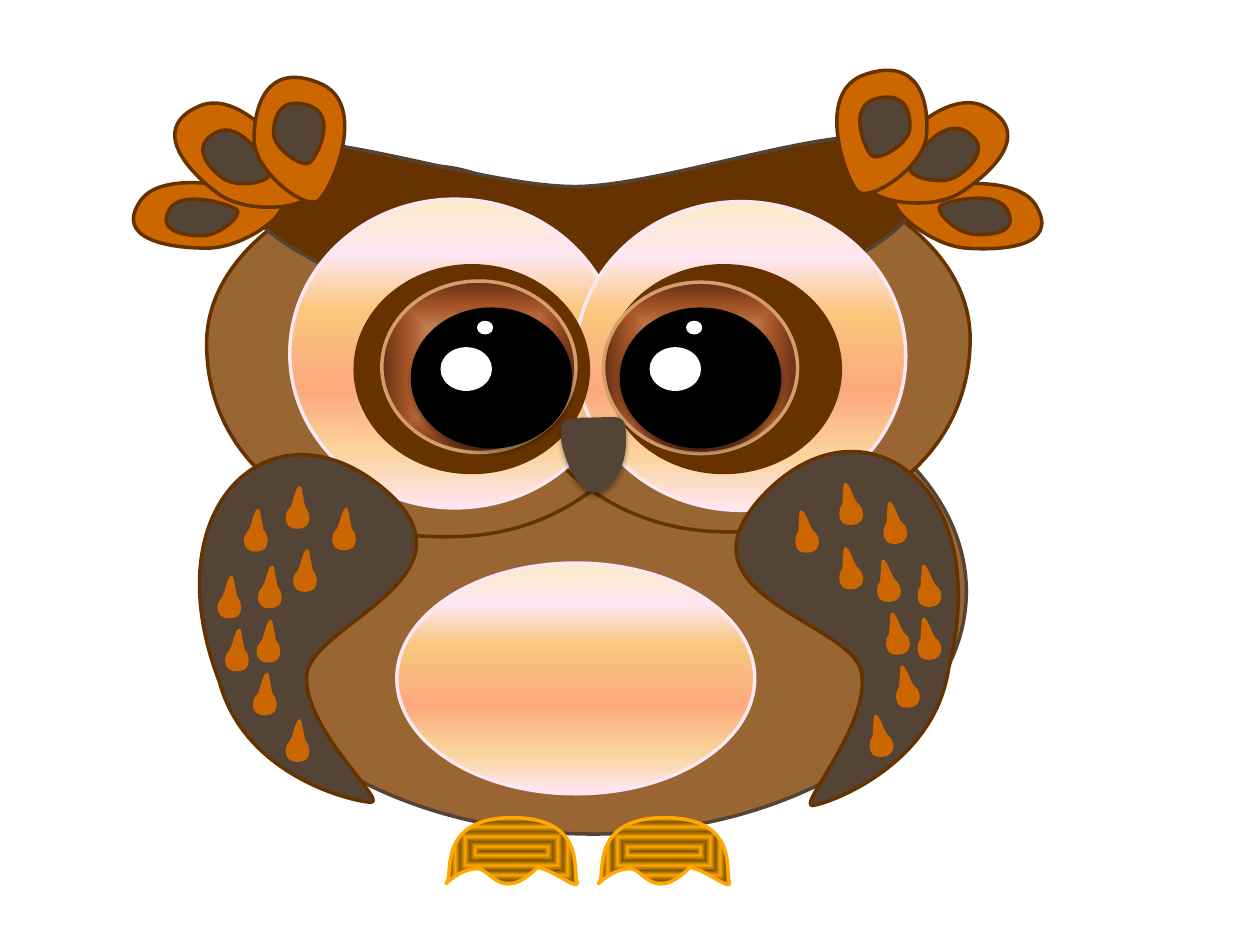
import math
from dataclasses import dataclass

import pptx
import pptx.dml.color
import pptx.enum.shapes
import pptx.oxml
import pptx.oxml.ns
import pptx.util
from lxml import etree

Pt = pptx.util.Pt


@dataclass(frozen=True)
class Theme:
    fur: str = "996633"
    bark: str = "663300"
    slate: str = "544436"
    rust: str = "CC6600"
    black: str = "000000"
    white: str = "FFFFFF"
    blush: str = "FEE7F2"
    tan: str = "D49E6C"
    gold: str = "FFA800"
    line: float = 2
    # Gradients: (position in percent, colour)
    sunset: tuple = ((0, "FBEAC7"), (18, "FEE7F2"), (36, "FAC77D"),
                     (61, "FBA97D"), (82, "FBD49C"), (100, "FEE7F2"))
    amber: tuple = ((0, "D6B19C"), (30, "D49E6C"), (70, "A65528"), (100, "663012"))
    brass: tuple = tuple(zip((0, 13, 28, 43, 58, 72, 87, 100),
                             ("825600", "FFA800") * 4))


# Outlines: a start point, then cubic curves (6 numbers) or lines (2 numbers).
# Each one is stretched to its frame, so only the proportions count.
HEAD = [(372, 138), (370, 89, 242, 0, 180, 0), (118, 1, 0, 53, 0, 141),
        (0, 230, 76, 297, 196, 294), (317, 292, 375, 187, 372, 138)]
BROW = [(0, 30), (2, -34, 179, 40, 271, 40), (362, 39, 546, -41, 549, 28),
        (554, 100, 363, 152, 272, 152), (180, 153, -2, 95, 0, 30)]
BEAK = [(0, 18), (0, 8, -5, 0, 22, 0), (48, 0, 52, -5, 52, 18),
        (52, 41, 40, 60, 26, 60), (12, 60, 1, 28, 0, 18)]
WING = [(81, 124.8), (72.7, 96.2, -35.5, 96.6, 12.1, 31.2),
        (59.7, -34.3, 141.9, 8.1, 129.9, 115.1),
        (129.7, 171.9, 71.4, 201.7, 63.6, 203.5),
        (55.1, 204.8, 90.1, 153.4, 81, 124.8)]
DROP = [(-12, 4.1), (-11.6, 1.3, -8, -3.9, -1.6, -3.8), (11.7, -12.7),
        (11.9, -9.1, 4.2, 0.6, 4.5, 4.2), (4.3, 10.5, -1, 13.4, -3.8, 13),
        (-7.5, 13.3, -12.3, 6.9, -12, 4.1)]
FEATHER = [(5, 15), (24, -15, 107, 8, 116, 15), (126, 22, 89, 52, 58, 52),
           (28, 52, -15, 45, 5, 15)]
FOOT = [(1, 50), (5, 43, -6, 0, 52, 0), (110, 0, 100, 41, 103, 50),
        (106, 59, 85, 41, 72, 39), (44, 67, 36, 41, 25, 40), (8, 40, -4, 57, 1, 50)]


def span(path, axis, steps=20):
    """Lowest and highest value that an outline reaches along one axis."""
    seen = [path[0][axis]]
    for seg in path[1:]:
        ends = (seen[-1], *seg[axis::2])
        n = len(ends) - 1
        for i in range(1, steps + 1):
            t = i / steps
            seen.append(sum(math.comb(n, k) * (1 - t) ** (n - k) * t ** k * v
                            for k, v in enumerate(ends)))
    return min(seen), max(seen)


class Painter:
    """Holds the theme and the group on the current slide."""

    def __init__(self, slide, theme):
        self.theme = theme
        self.shapes = slide.shapes.add_group_shape().shapes

    def ellipse(self, at, fill, line=None, **style):
        sp = self.shapes.add_shape(pptx.enum.shapes.MSO_SHAPE.OVAL, *map(Pt, at))
        self.paint(sp, fill, line, **style)

    def outline(self, path, at, fill, line=None, rot=0, flip=False, **style):
        left, top, width, height = map(Pt, at)
        (x0, x1), (y0, y1) = span(path, 0), span(path, 1)

        def place(x, y):
            px = round((x - x0) / (x1 - x0) * width)
            return width - px if flip else px, round((y - y0) / (y1 - y0) * height)

        # Frame first, then the curved segments inside it
        fb = self.shapes.build_freeform(0, 0)
        fb.add_line_segments([(width, 0), (width, height), (0, height)])
        sp = fb.convert_to_shape(left, top)
        sp.rotation = rot
        track = next(sp._element.iter(pptx.oxml.ns.qn("a:path")))
        for child in list(track):
            track.remove(child)
        tags = {2: "lnTo", 6: "cubicBezTo"}
        for i, seg in enumerate(path):
            step = self.add(track, tags[len(seg)] if i else "moveTo")
            for x, y in zip(seg[::2], seg[1::2]):
                px, py = place(x, y)
                self.add(step, "pt", x=px, y=py)
        self.add(track, "close")
        self.paint(sp, fill, line, **style)

    def paint(self, sp, fill, line, radial=False, shadow=False):
        sp.shadow.inherit = False
        if isinstance(fill, str):
            sp.fill.solid()
            sp.fill.fore_color.rgb = pptx.dml.color.RGBColor.from_string(fill)
        else:
            self.gradient(sp, fill, radial)
        if line:
            sp.line.color.rgb = pptx.dml.color.RGBColor.from_string(line)
            sp.line.width = Pt(self.theme.line)
        else:
            sp.line.fill.background()
        if shadow:
            self.soft_shadow(sp)

    def gradient(self, sp, stops, radial):
        sp.fill.gradient()
        grad = sp._element.spPr.find(pptx.oxml.ns.qn("a:gradFill"))
        for child in list(grad):
            grad.remove(child)
        gs_lst = self.add(grad, "gsLst")
        for pos, colour in stops:
            self.add(self.add(gs_lst, "gs", pos=pos * 1000), "srgbClr", val=colour)
        if radial:
            self.add(self.add(grad, "path", path="shape"), "fillToRect",
                     l=50000, t=50000, r=50000, b=50000)
        else:
            self.add(grad, "lin", ang=5400000, scaled=0)

    def soft_shadow(self, sp):
        effects = sp._element.spPr.find(pptx.oxml.ns.qn("a:effectLst"))
        shade = self.add(effects, "outerShdw", blurRad=Pt(3.1), dist=Pt(1.8),
                         dir=5400000, rotWithShape=0)
        clr = self.add(shade, "srgbClr", val=self.theme.black)
        self.add(clr, "alpha", val=35000)

    def add(self, parent, tag, **attrs):
        return etree.SubElement(parent, pptx.oxml.ns.qn("a:" + tag),
                                {k: str(v) for k, v in attrs.items()})


def main():
    prs = pptx.Presentation()
    prs.slide_width, prs.slide_height = Pt(720), Pt(540)
    th = Theme()
    owl = Painter(prs.slides.add_slide(prs.slide_layouts[6]), th)

    # Body, the two halves of the head, and the brow
    owl.ellipse((126, 199.4, 426.2, 277.2), th.fur, th.slate)
    owl.outline(HEAD, (118.1, 95, 268.6, 211.7), th.fur, th.bark)
    owl.outline(HEAD, (285.8, 92.2, 268.6, 211.7), th.fur, th.bark, flip=True)
    owl.outline(BROW, (133.9, 77.8, 395.3, 109.4), th.bark, th.slate)

    # Eyes: discs, rings with irises, then pupils with two glints
    for x, y in ((165.6, 113.8), (329, 115.2)):
        owl.ellipse((x, y, 188.6, 176.4), th.sunset, th.blush)
    for ring_x, iris_x, iris_y in ((347, 344.9, 161.3), (203, 218.2, 160.6)):
        owl.ellipse((ring_x, 151.9, 133.2, 118.1), th.bark, th.bark)
        owl.ellipse((iris_x, iris_y, 110.9, 97.9), th.amber, th.tan, radial=True)
    for x in (354.2, 234.7):
        owl.ellipse((x, 175.7, 92.2, 80.6), th.black, shadow=True)
        owl.ellipse((x + 18, 199.4, 27.4, 23), th.white, th.white)
        owl.ellipse((x + 38.9, 184.3, 7.2, 5.8), th.white, th.white)

    # Beak
    owl.outline(BEAK, (320.4, 238.3, 37.4, 43.2), th.slate, shadow=True)

    # Wings with their drops
    right_drops = ((451.4, 295.9), (476.6, 280.1), (501.8, 290.9), (476.6, 316.8),
                   (498.2, 324), (521.3, 326.9), (503.3, 354.2), (521.3, 357.1),
                   (509, 384.5), (493.9, 412.6))
    left_drops = ((188.6, 294.5), (162, 282.2), (138.2, 295.2), (166.3, 318.2),
                  (146.2, 327.6), (123.1, 333.4), (145.4, 358.6), (127.4, 363.6),
                  (143.3, 388.8), (162, 415.4))
    for x, y, rot, drop_rot, flip, drops in (
            (414.7, 257.8, 7.9, 307.5, False, right_drops),
            (118.8, 258.5, 345.2, 45.6, True, left_drops)):
        owl.outline(WING, (x, y, 131, 203.8), th.slate, th.bark, rot, flip)
        for drop in drops:
            owl.outline(DROP, (*drop, 17.3, 18.7), th.rust, th.rust, drop_rot, flip)

    # Belly
    owl.ellipse((226.8, 321.8, 204.5, 131.8), th.sunset, th.blush)

    # Ear feathers: outer and inner size, then place and turn on each side
    sizes = (((85, 37.4), (41, 20.9)), ((85, 46.1), (41, 25.9)), ((71.3, 51.8), (34.6, 28.8)))
    left_ear = (((76.3, 104.4), (95, 113.8), 0), ((95.8, 69.1), (114.5, 78.5), 37.1),
                ((135.4, 54), (153.4, 61.9), 90))
    right_ear = (((510.5, 104.4), (536.4, 113), 4.2), ((493.9, 67.7), (519.1, 77), 327.1),
                 ((468, 49.7), (488.2, 58.3), 274.2))
    for ear, flip in ((left_ear, False), (right_ear, True)):
        for (outer, inner), (outer_at, inner_at, rot) in zip(sizes, ear):
            owl.outline(FEATHER, outer_at + outer, th.rust, th.bark, rot, flip)
            owl.outline(FEATHER, inner_at + inner, th.slate, th.bark, rot, flip)

    # Feet
    for x in (254.9, 342):
        owl.outline(FOOT, (x, 467.3, 74.9, 38.2), th.brass, th.gold, radial=True)

    prs.save("out.pptx")


if __name__ == "__main__":
    main()
